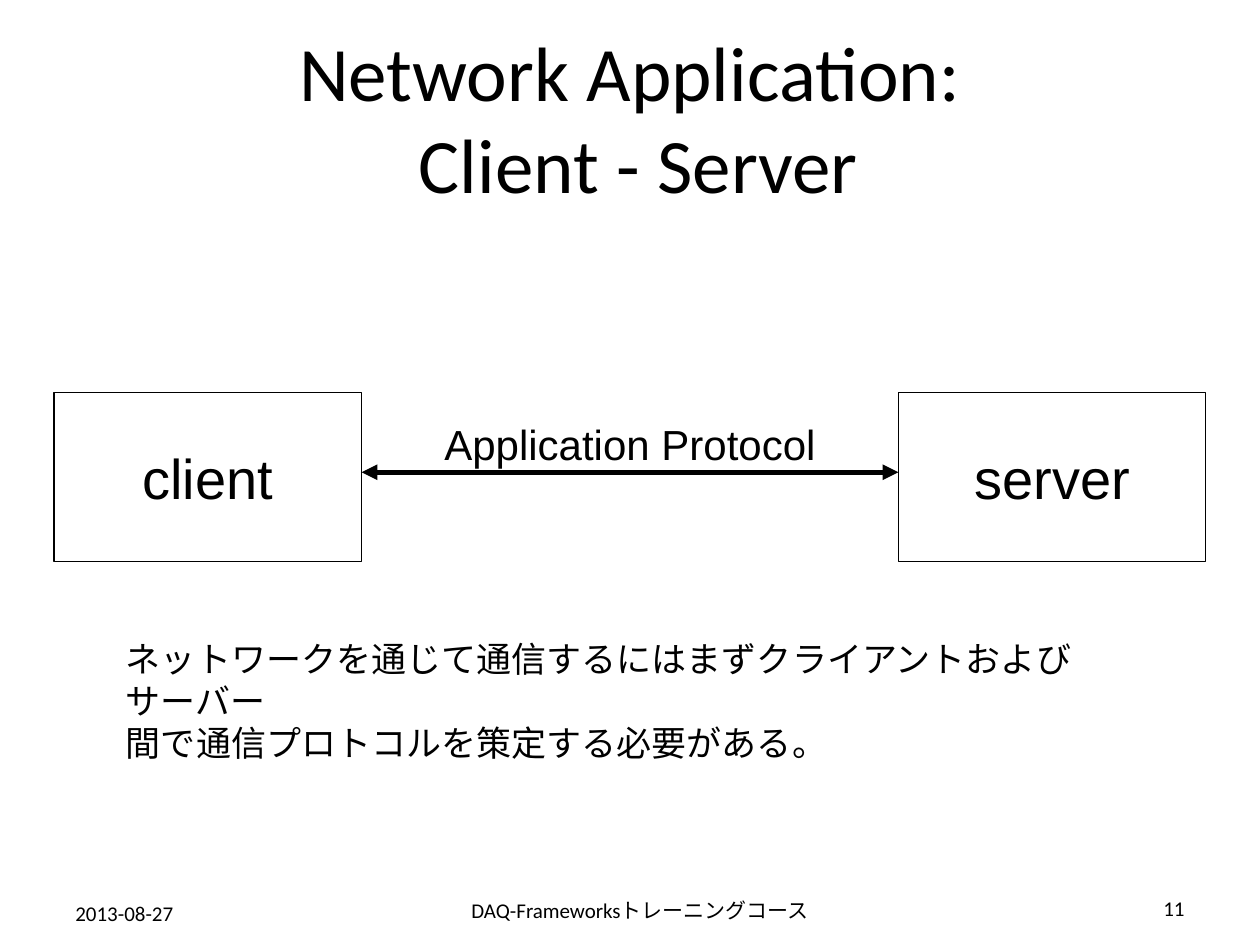
import pptx
import pptx.dml.color
import pptx.enum.shapes
import pptx.enum.text
import pptx.oxml
import pptx.oxml.ns
import pptx.util
from pptx.util import Cm

ALIGN = pptx.enum.text.PP_ALIGN
ANCHOR = pptx.enum.text.MSO_ANCHOR
BLACK = "000000"
WHITE = "FFFFFF"


def color(hex_string):
    return pptx.dml.color.RGBColor.from_string(hex_string)


def write(shape, text, size, font, align=ALIGN.LEFT, anchor=ANCHOR.TOP, wrap=True):
    frame = shape.text_frame
    frame.text = text
    frame.word_wrap = wrap
    frame.auto_size = pptx.enum.text.MSO_AUTO_SIZE.NONE
    frame.vertical_anchor = anchor
    for paragraph in frame.paragraphs:
        paragraph.alignment = align
        for run in paragraph.runs:
            run.font.size = pptx.util.Pt(size)
            run.font.name = font
            run.font.color.rgb = color(BLACK)


def add_text(slide, box, text, size, font, **options):
    shape = slide.shapes.add_textbox(*box)
    write(shape, text, size, font, **options)


def add_title(slide, box, text):
    title = slide.shapes.title
    title.left, title.top, title.width, title.height = box
    write(title, text, 44, "Calibri", ALIGN.CENTER, ANCHOR.MIDDLE)


def add_node(slide, box, name):
    node = slide.shapes.add_shape(pptx.enum.shapes.MSO_SHAPE.RECTANGLE, *box)
    node.shadow.inherit = False
    node.fill.background()
    node.line.color.rgb = color(BLACK)
    node.line.width = pptx.util.Pt(0.75)
    write(node, name, 32, "Arial", ALIGN.CENTER, ANCHOR.MIDDLE, wrap=False)


def add_double_arrow(slide, start, end, y):
    arrow = slide.shapes.add_connector(
        pptx.enum.shapes.MSO_CONNECTOR.STRAIGHT, start, y, end, y)
    arrow.line.color.rgb = color(BLACK)
    arrow.line.width = pptx.util.Pt(3)
    line = arrow.line._get_or_add_ln()
    for tag in ("a:headEnd", "a:tailEnd"):
        line.append(pptx.oxml.parse_xml(
            f'<{tag} {pptx.oxml.ns.nsdecls("a")} type="triangle"/>'))
    arrow._element.spPr.append(pptx.oxml.parse_xml(
        f'<a:effectLst {pptx.oxml.ns.nsdecls("a")}/>'))


def add_client_server(slide, left, top, width, height):
    """Two nodes at the ends of the box, joined by the labelled protocol arrow."""
    node_width = Cm(6.2)
    server_left = left + width - node_width
    for name, node_left in (("client", left), ("server", server_left)):
        add_node(slide, (node_left, top, node_width, height), name)
    add_double_arrow(slide, left + node_width, server_left, top + Cm(1.6))
    label_width = Cm(8)
    label_left = left + (width - label_width) // 2
    add_text(slide, (label_left, top + Cm(0.4), label_width, Cm(1.27)),
             "Application Protocol", 24, "Arial", align=ALIGN.CENTER, wrap=False)


def add_footer(slide, left, top, width, height):
    side = Cm(5.92)
    center = Cm(8.43)
    parts = (
        (left, top + Cm(0.1), side, "2013-08-27", ALIGN.LEFT),
        (left + Cm(7.42), top + Cm(0.03), center,
         "DAQ-Frameworksトレーニングコース", ALIGN.CENTER),
        (left + width - side, top, side, "11", ALIGN.RIGHT),
    )
    for part_left, part_top, part_width, text, align in parts:
        add_text(slide, (part_left, part_top, part_width, height),
                 text, 12, "Calibri", align=align)


def main():
    presentation = pptx.Presentation()
    presentation.slide_width = Cm(25.4)
    presentation.slide_height = Cm(19.05)
    slide = presentation.slides.add_slide(
        presentation.slide_layouts.get_by_name("Title Only"))
    slide.background.fill.solid()
    slide.background.fill.fore_color.rgb = color(WHITE)

    add_title(slide, (Cm(1.27), Cm(0.76), Cm(22.86), Cm(3.18)),
              "Network Application:\v Client - Server")
    add_client_server(slide, Cm(1.09), Cm(7.92), Cm(23.22), Cm(3.4))
    add_text(slide, (Cm(2.29), Cm(12.73), Cm(20.09), Cm(1.96)),
             "ネットワークを通じて通信するにはまずクライアントおよびサーバー\n"
             "間で通信プロトコルを策定する必要がある。", 20, "Arial")
    add_footer(slide, Cm(1.27), Cm(17.93), Cm(22.86), Cm(0.8))
    presentation.save("out.pptx")


if __name__ == "__main__":
    main()
